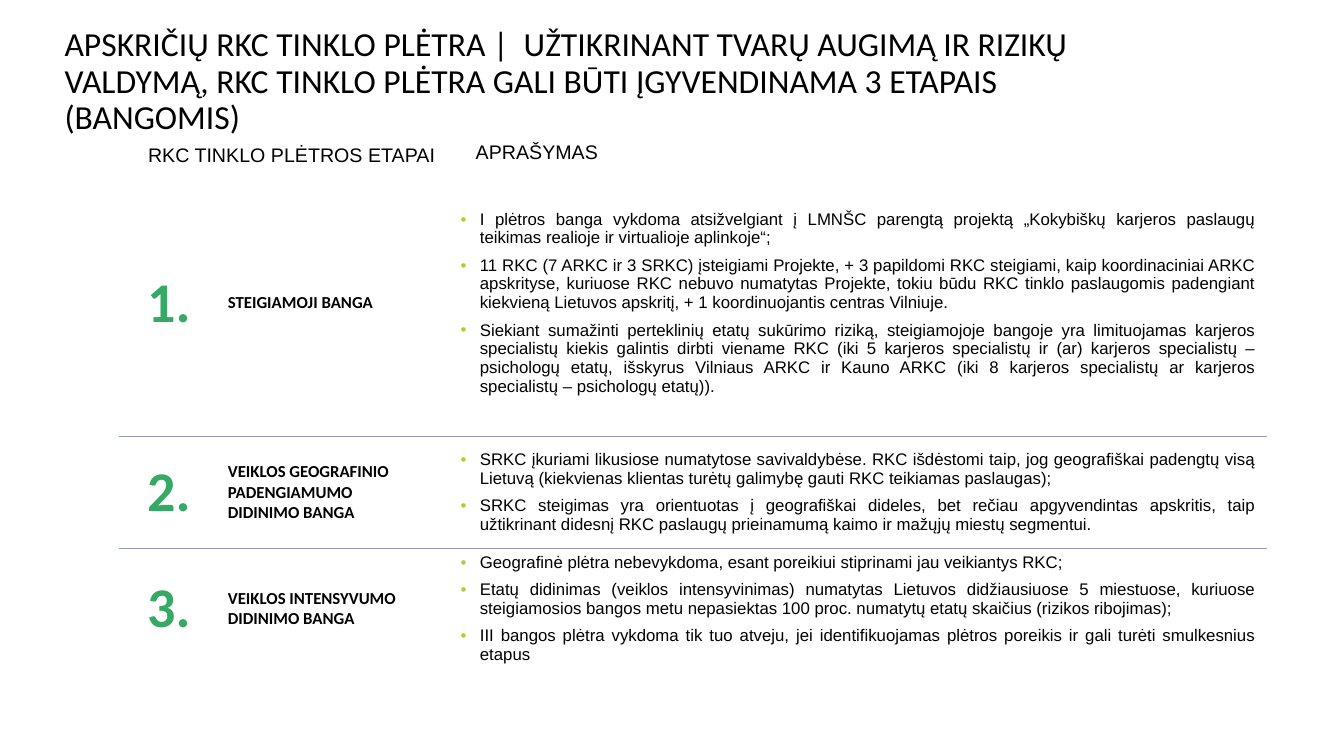
from lxml.etree import SubElement as Sub
from pptx import Presentation
from pptx.dml.color import RGBColor as Rgb
from pptx.enum.text import MSO_ANCHOR as Anchor, MSO_AUTO_SIZE as Fit, PP_ALIGN as Align
from pptx.oxml import parse_xml
from pptx.oxml.ns import qn, nsdecls
from pptx.util import Inches, Pt

HUES = {"ink": "000000", "num": "36AA65", "dot": "ABCD3A", "line": "9598C1"}

TITLE = ("APSKRIČIŲ RKC TINKLO PLĖTRA |  UŽTIKRINANT TVARŲ AUGIMĄ IR RIZIKŲ VALDYMĄ, "
         "RKC TINKLO PLĖTRA GALI BŪTI ĮGYVENDINAMA 3 ETAPAIS (BANGOMIS)")

# Each wave: its name and the points that describe it
WAVES = [
    ("STEIGIAMOJI BANGA", [
        "I plėtros banga vykdoma atsižvelgiant į LMNŠC parengtą projektą „Kokybiškų karjeros "
        "paslaugų teikimas realioje ir virtualioje aplinkoje“;",
        "11 RKC (7 ARKC ir 3 SRKC) įsteigiami Projekte, + 3 papildomi RKC steigiami, kaip "
        "koordinaciniai ARKC apskrityse, kuriuose RKC nebuvo numatytas Projekte, tokiu būdu RKC "
        "tinklo paslaugomis padengiant kiekvieną Lietuvos apskritį, + 1 koordinuojantis centras "
        "Vilniuje.",
        "Siekiant sumažinti perteklinių etatų sukūrimo riziką, steigiamojoje bangoje yra "
        "limituojamas karjeros specialistų kiekis galintis dirbti viename RKC (iki 5 karjeros "
        "specialistų ir (ar) karjeros specialistų – psichologų etatų, išskyrus Vilniaus ARKC ir "
        "Kauno ARKC (iki 8 karjeros specialistų ar karjeros specialistų – psichologų etatų)).",
    ]),
    ("VEIKLOS GEOGRAFINIO \vPADENGIAMUMO DIDINIMO BANGA", [
        "SRKC įkuriami likusiose numatytose savivaldybėse. RKC išdėstomi taip, jog geografiškai "
        "padengtų visą Lietuvą (kiekvienas klientas turėtų galimybę gauti RKC teikiamas "
        "paslaugas);",
        "SRKC steigimas yra orientuotas į geografiškai dideles, bet rečiau apgyvendintas "
        "apskritis, taip užtikrinant didesnį RKC paslaugų prieinamumą kaimo ir mažųjų miestų "
        "segmentui.",
    ]),
    ("VEIKLOS INTENSYVUMO \vDIDINIMO BANGA", [
        "Geografinė plėtra nebevykdoma, esant poreikiui stiprinami jau veikiantys RKC;",
        "Etatų didinimas (veiklos intensyvinimas) numatytas Lietuvos didžiausiuose 5 miestuose, "
        "kuriuose steigiamosios bangos metu nepasiektas 100 proc. numatytų etatų skaičius "
        "(rizikos ribojimas);",
        "III bangos plėtra vykdoma tik tuo atveju, jei identifikuojamas plėtros poreikis ir gali "
        "turėti smulkesnius etapus",
    ]),
]


def write(frame, *texts, size=12, face="Arial", hue="ink", bold=False,
          align=Align.LEFT, space=None, dots=False):
    """Fill a text frame, one paragraph per text."""
    for i, text in enumerate(texts):
        para = frame.add_paragraph() if i else frame.paragraphs[0]
        para.text = text
        para.alignment = align
        if space:
            para.line_spacing = space
        if dots:
            para.space_before = Pt(3 if i else 0)
            para.space_after = Pt(3)
            props = para._p.get_or_add_pPr()
            props.set("marL", str(Inches(0.19)))
            props.set("indent", str(-Inches(0.19)))
            Sub(Sub(props, qn("a:buClr")), qn("a:srgbClr"), val=HUES["dot"])
            Sub(props, qn("a:buFont"), typeface="Arial")
            Sub(props, qn("a:buChar"), char="•")
        for gap in para._p.findall(qn("a:br")):
            Sub(gap, qn("a:rPr"), sz=str(size * 100))
        for run in para.runs:
            font = run.font
            font.size, font.name, font.bold = Pt(size), face, bold
            font.color.rgb = Rgb.from_string(HUES[hue])


class Page:
    def __init__(self, deck):
        self.slide = deck.slides.add_slide(deck.slide_layouts[5])

    def title(self, text, *box):
        head = self.slide.shapes.title
        head.left, head.top, head.width, head.height = map(Inches, box)
        frame = head.text_frame
        frame.auto_size = Fit.NONE
        frame.vertical_anchor = Anchor.MIDDLE
        write(frame, text, size=24, face="Calibri", space=0.9)

    def label(self, text, *box, wrap=True):
        frame = self.slide.shapes.add_textbox(*map(Inches, box)).text_frame
        frame.word_wrap = wrap
        frame.auto_size = Fit.SHAPE_TO_FIT_TEXT
        write(frame, text, size=14)

    def rule(self, cell, *sides):
        for i, side in enumerate(sides):
            cell._tc.get_or_add_tcPr().insert(i, parse_xml(
                f'<a:{side} {nsdecls("a")} w="{Pt(1)}"><a:solidFill>'
                f'<a:srgbClr val="{HUES["line"]}"/></a:solidFill></a:{side}>'))

    def table(self, waves, left, top, cols, rows):
        grid = self.slide.shapes.add_table(
            len(rows), len(cols), Inches(left), Inches(top),
            Inches(sum(cols)), Inches(sum(rows))).table
        grid.first_row = grid.horz_banding = False
        for col, wide in zip(grid.columns, cols):
            col.width = Inches(wide)
        for i, (row, high, (name, points)) in enumerate(zip(grid.rows, rows, waves)):
            row.height = Inches(high)
            sides = ["lnT"] * (i > 0) + ["lnB"] * (i < len(rows) - 1)
            for cell in row.cells:
                cell.vertical_anchor = Anchor.MIDDLE
                cell.fill.background()
                self.rule(cell, *sides)
            num, label, _, body = row.cells
            num.margin_left = label.margin_left = 0
            write(num.text_frame, f"{i + 1}.", size=40, face="Calibri", hue="num",
                  bold=True, align=Align.CENTER)
            write(label.text_frame, name, face="Calibri", bold=True)
            write(body.text_frame, *points, align=Align.JUSTIFY, dots=True)


def main():
    deck = Presentation()
    deck.slide_width, deck.slide_height = Inches(13.33), Inches(7.5)
    page = Page(deck)
    # Heading
    page.title(TITLE, 0.54, 0.09, 10.3, 1.45)
    # Waves
    page.table(WAVES, 1.19, 1.68, [1.07, 1.89, 0.32, 8.09], [2.65, 1.11, 1.2])
    # Column heads
    page.label("RKC TINKLO PLĖTROS ETAPAI", 1.37, 1.37, 4, 0.34)
    page.label("APRAŠYMAS", 4.62, 1.34, 1.43, 0.34, wrap=False)
    deck.save("out.pptx")


if __name__ == "__main__":
    main()
